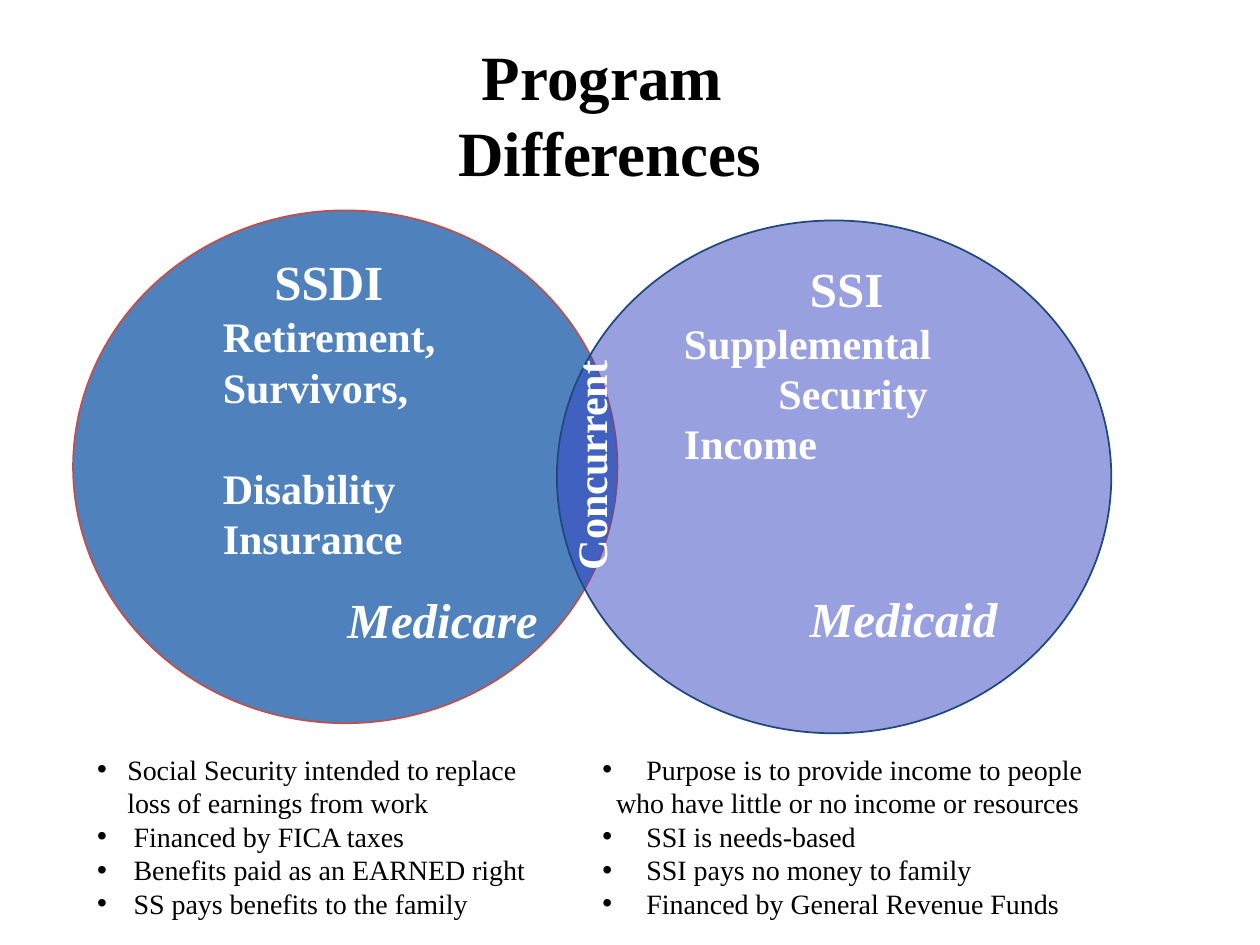
import pptx
import pptx.util
import pptx.dml.color
import pptx.enum.shapes
import pptx.enum.text
import pptx.oxml.ns
from lxml import etree

Inches, Pt = pptx.util.Inches, pptx.util.Pt
RGBColor = pptx.dml.color.RGBColor
ALIGN = pptx.enum.text.PP_ALIGN

BLACK = RGBColor(0, 0, 0)
WHITE = RGBColor(255, 255, 255)
BLUE = RGBColor(0x4F, 0x81, 0xBD)
RED = RGBColor(0xC0, 0x50, 0x4D)
VIOLET = RGBColor(0x32, 0x43, 0xC2)
NAVY = RGBColor(0x1F, 0x49, 0x7D)

BASE = {"name": "Times New Roman", "bold": True, "italic": False}
TITLE = {**BASE, "size": Pt(36), "color": BLACK}
HEAD = {**BASE, "size": Pt(28), "color": WHITE}
NAME = {**HEAD, "size": Pt(24)}
HEALTH = {**HEAD, "italic": True}
LIST = {**BASE, "size": Pt(16), "color": BLACK, "bold": False}

TITLE_LINES = ["Program ", "Differences"]
CIRCLES = [
    ((0.58, 1.67, 4.32, 4.07), BLUE, RED, 100),
    ((4.42, 1.75, 4.4, 4.07), VIOLET, NAVY, 50),
]
LABELS = [
    ((1.5, 1.95, 3, 3.6), [
        ("SSDI", HEAD, 0.58, 0),
        ("Retirement,", NAME, 0.17, 0),
        ("Survivors,", NAME, 0.17, 0),
        ("Disability", NAME, 0.17, 29),
        ("Insurance", NAME, 0.17, 0),
        ("Medicare", HEALTH, 1.16, 15),
    ]),
    ((5.33, 2, 3.08, 3.6), [
        ("SSI", HEAD, 1, 0),
        ("Supplemental", NAME, 0, 0),
        ("Security", NAME, 0.75, 0),
        ("Income", NAME, 0, 0),
        ("Medicaid", HEALTH, 1, 69),
    ]),
]
OVERLAP = ("Concurrent", (3.59, 3.44, 2.2, 0.51))
LISTS = [
    ((0.67, 5.92, 3.64, 1.45), [
        ("Social Security intended to replace loss of earnings from work", 0.24, True),
        ("Financed by FICA taxes", 0.29, True),
        ("Benefits paid as an EARNED right", 0.29, True),
        ("SS pays benefits to the family", 0.29, True),
    ]),
    ((4.68, 5.92, 4.94, 1.45), [
        ("Purpose is to provide income to people", 0.35, True),
        ("who have little or no income or resources", 0.11, False),
        ("SSI is needs-based", 0.35, True),
        ("SSI pays no money to family", 0.35, True),
        ("Financed by General Revenue Funds", 0.35, True),
    ]),
]


def place(box, area):
    for side, length in zip(("left", "top", "width", "height"), area):
        setattr(box, side, Inches(length))


def prepare(box):
    frame = box.text_frame
    frame.word_wrap = True
    frame.auto_size = pptx.enum.text.MSO_AUTO_SIZE.NONE
    frame.vertical_anchor = pptx.enum.text.MSO_ANCHOR.TOP
    return frame


def write(frame, index, text, style, align=ALIGN.LEFT, before=0, margin=0, bullet=None):
    para = frame.paragraphs[0] if index == 0 else frame.add_paragraph()
    para.alignment = align
    para.space_before = Pt(before)
    properties = para._p.get_or_add_pPr()
    properties.set("marL", str(Inches(margin)))
    properties.set("indent", str(-Inches(margin) if bullet else 0))
    if bullet:
        etree.SubElement(properties, pptx.oxml.ns.qn("a:buChar")).set("char", "•")
    elif bullet is False:
        etree.SubElement(properties, pptx.oxml.ns.qn("a:buNone"))
    span = para.add_run()
    span.text = text
    for key, value in style.items():
        if key == "color":
            span.font.color.rgb = value
        else:
            setattr(span.font, key, value)


def add_circle(page, area, fill, line, opacity):
    circle = page.shapes.add_shape(
        pptx.enum.shapes.MSO_SHAPE.OVAL, *map(Inches, area))
    circle.shadow.inherit = False
    circle.fill.solid()
    circle.fill.fore_color.rgb = fill
    circle.line.color.rgb = line
    circle.line.width = Pt(1)
    if opacity < 100:
        color = circle._element.spPr.find(".//" + pptx.oxml.ns.qn("a:srgbClr"))
        etree.SubElement(color, pptx.oxml.ns.qn("a:alpha")).set("val", str(opacity * 1000))


def main():
    deck = pptx.Presentation()
    deck.slide_width, deck.slide_height = Inches(10), Inches(7.5)
    page = deck.slides.add_slide(deck.slide_layouts[3])

    for circle in CIRCLES:
        add_circle(page, *circle)

    for area, lines in LABELS:
        frame = prepare(page.shapes.add_textbox(*map(Inches, area)))
        for index, (text, style, margin, before) in enumerate(lines):
            write(frame, index, text, style, before=before, margin=margin)

    text, area = OVERLAP
    box = page.shapes.add_textbox(*map(Inches, area))
    box.rotation = 270
    write(prepare(box), 0, text, NAME, ALIGN.CENTER)

    title = page.shapes.title
    place(title, (2.55, 0.25, 4.58, 1.31))
    frame = prepare(title)
    for index, text in enumerate(TITLE_LINES):
        write(frame, index, text, TITLE, ALIGN.CENTER)

    for holder, (area, items) in zip(list(page.placeholders)[1:], LISTS):
        place(holder, area)
        frame = prepare(holder)
        for index, (text, margin, bullet) in enumerate(items):
            write(frame, index, text, LIST, margin=margin, bullet=bullet)

    deck.save("out.pptx")


if __name__ == "__main__":
    main()
